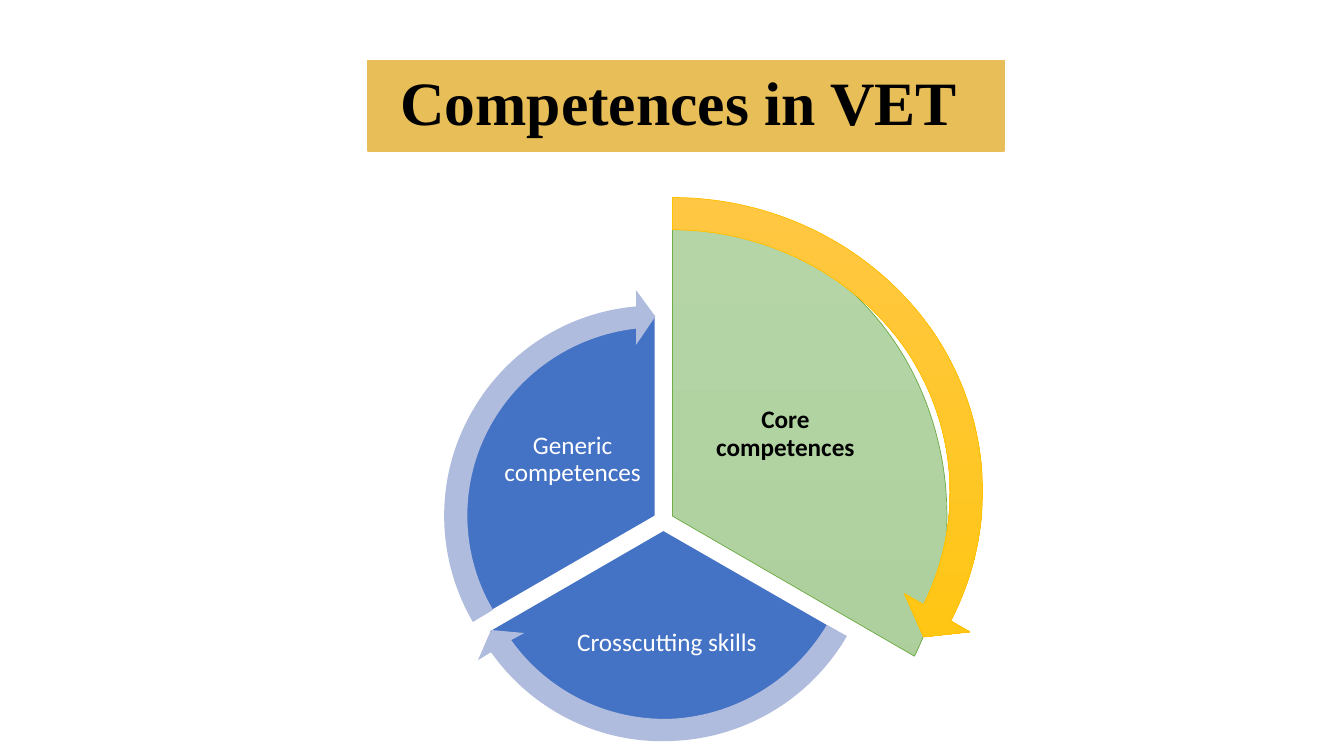
from lxml import etree
from pptx import Presentation
from pptx import util as u
from pptx.dml.color import RGBColor
from pptx.enum import text
from pptx.oxml import ns

BLACK = RGBColor(0, 0, 0)
WHITE = RGBColor(0xFF, 0xFF, 0xFF)
SAND = RGBColor(0xE7, 0xBE, 0x57)
BLUE = RGBColor(0x44, 0x72, 0xC4)
PALE = RGBColor(0xB0, 0xBC, 0xDE)
GREEN = RGBColor(0x70, 0xAD, 0x47)
GOLD = RGBColor(0xFF, 0xC0, 0x00)
GREENS = RGBColor(0xB5, 0xD5, 0xA7), RGBColor(0xAA, 0xCE, 0x99)
GOLDS = RGBColor(0xFF, 0xC7, 0x46), RGBColor(0xFF, 0xC6, 0x00)

# Outlines in inches: a pair is a corner, six numbers are a Bezier curve.
CORE = [(6.67, 2.19), (7.67, 2.19, 8.6, 2.78, 9.07, 3.73),
        (9.5, 4.6, 9.5, 5.64, 9.07, 6.51), (6.67, 5.12), (6.67, 2.19)]
CROSS = [(8.32, 6.26), (7.96, 6.88, 7.3, 7.26, 6.58, 7.26),
         (5.87, 7.26, 5.21, 6.88, 4.85, 6.26), (6.58, 5.26), (8.32, 6.26)]
GENERIC = [(4.77, 6.12), (4.41, 5.5, 4.41, 4.74, 4.77, 4.12),
           (5.13, 3.5, 5.79, 3.12, 6.5, 3.12), (6.5, 5.12), (4.77, 6.12)]
CORE_ARROW = [
    (6.67, 1.96), (7.73, 1.96, 8.71, 2.48, 9.28, 3.33),
    (9.84, 4.19, 9.9, 5.25, 9.43, 6.16), (9.62, 6.27), (9.16, 6.32),
    (8.97, 5.89), (9.16, 6), (9.56, 5.19, 9.5, 4.25, 9, 3.49),
    (8.49, 2.74, 7.61, 2.28, 6.67, 2.28)]
CROSS_ARROW = [
    (8.4, 6.31), (8.04, 6.93, 7.39, 7.32, 6.68, 7.35),
    (5.96, 7.39, 5.28, 7.05, 4.87, 6.47), (4.74, 6.55), (4.87, 6.25),
    (5.2, 6.28), (5.07, 6.35), (5.44, 6.87, 6.05, 7.16, 6.68, 7.13),
    (7.31, 7.09, 7.88, 6.74, 8.2, 6.2)]
GENERIC_ARROW = [
    (4.69, 6.17), (4.33, 5.55, 4.31, 4.79, 4.64, 4.16),
    (4.97, 3.52, 5.6, 3.1, 6.31, 3.04), (6.31, 2.88), (6.5, 3.14),
    (6.31, 3.42), (6.31, 3.26), (5.68, 3.33, 5.13, 3.71, 4.84, 4.27),
    (4.55, 4.83, 4.57, 5.51, 4.89, 6.05)]


def place(shape, left, top, width, height):
    shape.left, shape.top = u.Inches(left), u.Inches(top)
    shape.width, shape.height = u.Inches(width), u.Inches(height)


def bend(shape, outline):
    """Give a freeform true curves, measured from its frame."""
    track = shape._element.xpath(".//a:path")[0]
    for child in list(track):
        track.remove(child)
    track.set("w", str(shape.width))
    track.set("h", str(shape.height))
    for index, part in enumerate(outline):
        kind = "cubicBezTo" if len(part) == 6 else "lnTo" if index else "moveTo"
        move = etree.SubElement(track, ns.qn("a:" + kind))
        for x, y in zip(part[::2], part[1::2]):
            etree.SubElement(move, ns.qn("a:pt"),
                             x=str(u.Inches(x) - shape.left),
                             y=str(u.Inches(y) - shape.top))
    etree.SubElement(track, ns.qn("a:close"))


def draw(slide, outline, frame, fill, line=None, width=1):
    """Draw a closed outline; a pair of fill colours is a gradient."""
    ends = [part[-2:] for part in outline]
    pen = slide.shapes.build_freeform(*ends[0], scale=u.Inches(1))
    pen.add_line_segments(ends[1:], close=True)
    shape = pen.convert_to_shape()
    place(shape, *frame)
    bend(shape, outline)
    shape.shadow.inherit = False
    if isinstance(fill, RGBColor):
        shape.fill.solid()
        shape.fill.fore_color.rgb = fill
    else:
        shape.fill.gradient()
        shape.fill.gradient_angle = 270
        for stop, color in zip(shape.fill.gradient_stops, fill):
            stop.color.rgb = color
    if line is None:
        shape.line.fill.background()
    else:
        shape.line.color.rgb = line
        shape.line.width = u.Pt(width)
    return shape


def write(shape, words, size=18, font="Calibri", color=WHITE, bold=False,
          after=8):
    frame = shape.text_frame
    frame.word_wrap = True
    frame.auto_size = text.MSO_AUTO_SIZE.NONE
    frame.vertical_anchor = text.MSO_ANCHOR.MIDDLE
    para = frame.paragraphs[0]
    para.alignment = text.PP_ALIGN.CENTER
    para.line_spacing = 0.9
    para.space_after = u.Pt(after)
    run = para.add_run()
    run.text = words
    run.font.size = u.Pt(size)
    run.font.name = font
    run.font.bold = bold
    run.font.color.rgb = color


def inset(shape, left, top, right, bottom):
    frame = shape.text_frame
    frame.margin_left, frame.margin_top = u.Inches(left), u.Inches(top)
    frame.margin_right, frame.margin_bottom = u.Inches(right), u.Inches(bottom)


def head(slide, words):
    title = slide.shapes.title
    place(title, 3.65, 0.6, 6.31, 0.9)
    title.fill.solid()
    title.fill.fore_color.rgb = SAND
    title.line.color.rgb = SAND
    title.line.width = u.Pt(1)
    write(title, words, size=44, font="Times New Roman", color=BLACK,
          bold=True, after=0)


def main():
    deck = Presentation()
    deck.slide_width, deck.slide_height = u.Inches(13.33), u.Inches(7.5)
    slide = deck.slides.add_slide(deck.slide_layouts[5])
    head(slide, "Competences in VET ")

    core = draw(slide, CORE, (3.94, 2.19, 5.46, 5.87), GREENS, GREEN, 0.5)
    inset(core, 2.95, 1.27, 0.71, 2.9)
    write(core, "Core competences", color=BLACK, bold=True)
    cross = draw(slide, CROSS, (4.59, 3.26, 4, 4), BLUE, WHITE)
    inset(cross, 0.98, 2.62, 0.93, 0.38)
    write(cross, "Crosscutting skills")
    generic = draw(slide, GENERIC, (4.5, 3.12, 4, 4), BLUE, WHITE)
    inset(generic, 0.49, 0.87, 2.13, 1.99)
    write(generic, "Generic competences")

    draw(slide, CORE_ARROW, (3.38, 1.75, 6.58, 6.26), GOLDS, GOLD, 0.5)
    draw(slide, CROSS_ARROW, (4.34, 3.02, 4.49, 4.49), PALE)
    draw(slide, GENERIC_ARROW, (4.26, 2.87, 4.49, 4.49), PALE)
    deck.save("out.pptx")


if __name__ == "__main__":
    main()
